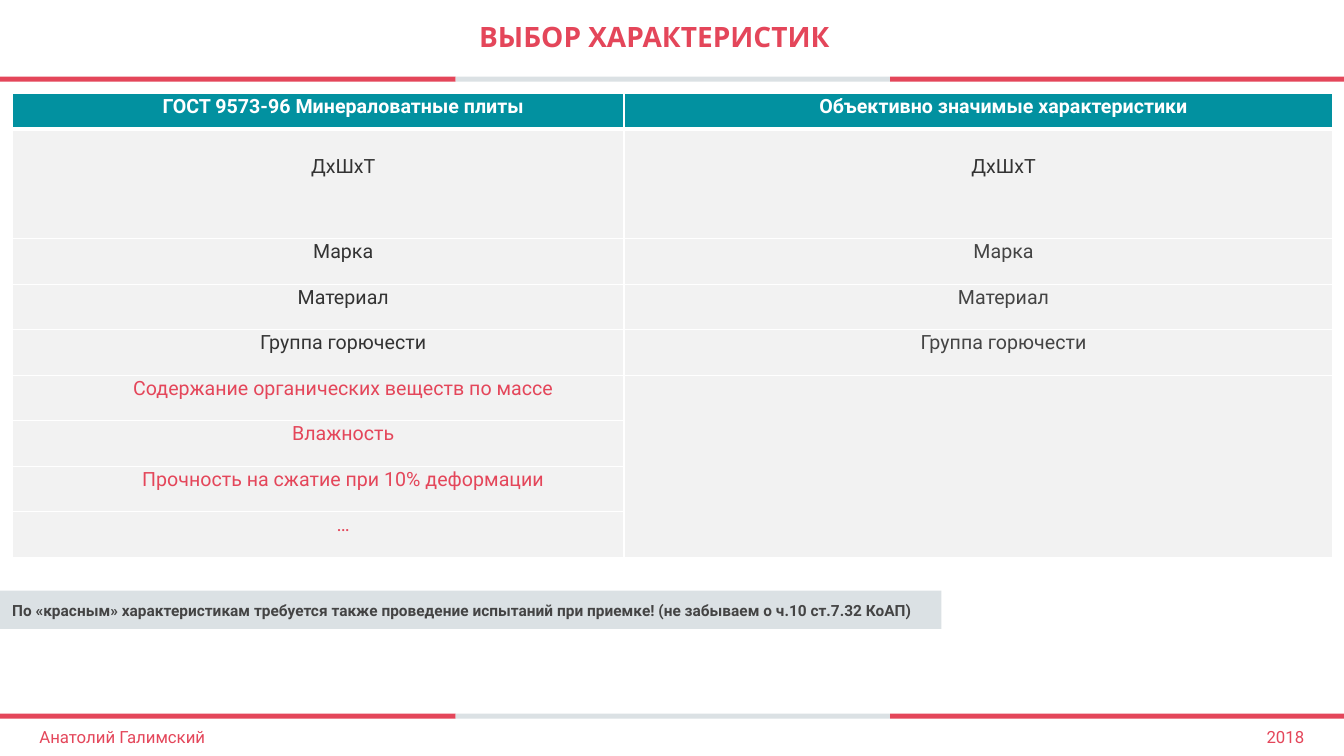
"""Build a slide that compares standard and objectively significant characteristics."""
from dataclasses import dataclass

from lxml import etree
from pptx import Presentation
from pptx.dml.color import RGBColor
from pptx.enum.shapes import MSO_SHAPE
from pptx.enum.text import MSO_ANCHOR, PP_ALIGN
from pptx.oxml.ns import qn
from pptx.util import Inches, Pt

RECTANGLE = MSO_SHAPE.RECTANGLE
MIDDLE, TOP = MSO_ANCHOR.MIDDLE, MSO_ANCHOR.TOP
LEFT, CENTER, RIGHT = PP_ALIGN.LEFT, PP_ALIGN.CENTER, PP_ALIGN.RIGHT

COLORS = {
    "red": "E4465A",
    "gray": "DBE1E4",
    "teal": "0291A0",
    "cell": "F2F2F2",
    "white": "FFFFFF",
    "dark": "333333",
    "text": "444444",
}
SLIDE_WIDTH, SLIDE_HEIGHT = Inches(13.33), Inches(7.5)
BODY_FONT, TITLE_FONT = "Roboto", "Karla"
COLUMN_WIDTHS = (45.53, 52.73)
HEADER_HEIGHT, SIZE_ROW_HEIGHT, ROW_HEIGHT = 4.67, 14.53, 6.02


@dataclass(frozen=True)
class Area:
    """Position and size in percent of the slide."""
    left: float
    top: float
    width: float
    height: float

    def lengths(self) -> tuple[int, int, int, int]:
        """Return left, top, width and height as slide lengths."""
        return (across(self.left), down(self.top), across(self.width), down(self.height))


@dataclass(frozen=True)
class Style:
    """Look of a line of text."""
    size: float
    color: str
    bold: bool = False
    align: int = LEFT
    font: str = BODY_FONT


@dataclass(frozen=True)
class Label:
    """Text placed in an area."""
    text: str
    area: Area
    style: Style
    anchor: int = MIDDLE


@dataclass(frozen=True)
class Row:
    """Two cells of the table with the colours of their text."""
    texts: tuple[str, str]
    colors: tuple[str, str]
    height: float = ROW_HEIGHT


STRIPES = ((0, 33.9, "red"), (33.9, 32.32, "gray"), (66.22, 33.78, "red"))
STRIPE_TOPS = (10.13, 94.4)
TITLE = Label("ВЫБОР ХАРАКТЕРИСТИК", Area(14.78, 0, 67.8, 10.13),
              Style(20, "red", True, CENTER, TITLE_FONT))
LABELS = (
    Label("Анатолий Галимский", Area(2.93, 95.07, 63.23, 4.8), Style(12, "red")),
    Label("2018", Area(74.55, 95.07, 22.5, 4.8), Style(12, "red", align=RIGHT)),
    Label("По «красным» характеристикам требуется также проведение испытаний при приемке! "
          "(не забываем о ч.10 ст.7.32 КоАП)",
          Area(0.9, 79.47, 69.15, 2.53), Style(11, "text", True), TOP),
)
ROWS = (
    Row(("ГОСТ 9573-96 Минераловатные плиты", "Объективно значимые характеристики"),
        ("white", "white"), HEADER_HEIGHT),
    Row(("ДхШхТ", "ДхШхТ"), ("dark", "dark"), SIZE_ROW_HEIGHT),
    *(Row((name, name), ("dark", "text")) for name in ("Марка", "Материал", "Группа горючести")),
    *(Row((name, ""), ("red", "red")) for name in (
        "Содержание органических веществ по массе", "Влажность",
        "Прочность на сжатие при 10% деформации", "…")),
)
FIRST_RED_ROW = 5


def across(percent: float) -> int:
    """Return a share of the slide width."""
    return round(SLIDE_WIDTH * percent / 100)


def down(percent: float) -> int:
    """Return a share of the slide height."""
    return round(SLIDE_HEIGHT * percent / 100)


def rgb(name: str) -> RGBColor:
    """Return a palette colour."""
    return RGBColor.from_string(COLORS[name])


def write(text_frame, text: str, style: Style):
    """Write one formatted paragraph and return it."""
    text_frame.text = text
    paragraph = text_frame.paragraphs[0]
    paragraph.alignment = style.align
    for run in paragraph.runs:
        run.font.name = style.font
        run.font.size = Pt(style.size)
        run.font.bold = style.bold
        run.font.color.rgb = rgb(style.color)
    return paragraph


def add_bar(slide, area: Area, color: str) -> None:
    """Draw a plain filled rectangle."""
    shape = slide.shapes.add_shape(RECTANGLE, *area.lengths())
    shape.shadow.inherit = False
    shape.fill.solid()
    shape.fill.fore_color.rgb = rgb(color)
    shape.line.fill.background()


def add_label(slide, label: Label) -> None:
    """Draw a text box without insets."""
    text_frame = slide.shapes.add_textbox(*label.area.lengths()).text_frame
    text_frame.word_wrap = True
    text_frame.vertical_anchor = label.anchor
    text_frame.margin_left = text_frame.margin_right = 0
    text_frame.margin_top = text_frame.margin_bottom = 0
    write(text_frame, label.text, label.style)


def set_title(slide, title: Label) -> None:
    """Place and format the title placeholder."""
    shape = slide.shapes.title
    shape.left, shape.top, shape.width, shape.height = title.area.lengths()
    shape.text_frame.vertical_anchor = title.anchor
    write(shape.text_frame, title.text, title.style).line_spacing = 0.9


def set_borders(cell, bottom_width: float) -> None:
    """Give a cell white borders."""
    properties = cell._tc.get_or_add_tcPr()
    widths = {"a:lnL": 1, "a:lnR": 1, "a:lnT": 1, "a:lnB": bottom_width}
    for index, (tag, width) in enumerate(widths.items()):
        line = etree.Element(qn(tag), w=str(Pt(width)))
        fill = etree.SubElement(line, qn("a:solidFill"))
        etree.SubElement(fill, qn("a:srgbClr"), val=COLORS["white"])
        properties.insert(index, line)


def fill_cell(cell, text: str, color: str, is_header: bool) -> None:
    """Write and format one table cell."""
    cell.margin_left = cell.margin_right = Inches(0.04)
    cell.margin_top = cell.margin_bottom = 0
    cell.fill.solid()
    cell.fill.fore_color.rgb = rgb("teal" if is_header else "cell")
    set_borders(cell, 3 if is_header else 1)
    paragraph = write(cell.text_frame, text, Style(14, color, is_header, CENTER))
    paragraph.line_spacing = 1.07
    paragraph._p.get_or_add_pPr().set("marL", str(Inches(0.5)))


def add_comparison(slide) -> None:
    """Draw the table of characteristics."""
    area = Area(0.9, 12.4, sum(COLUMN_WIDTHS), sum(row.height for row in ROWS))
    table = slide.shapes.add_table(len(ROWS), len(COLUMN_WIDTHS), *area.lengths()).table
    for column, width in zip(table.columns, COLUMN_WIDTHS):
        column.width = across(width)
    for row_index, row in enumerate(ROWS):
        table.rows[row_index].height = down(row.height)
        for column_index, (text, color) in enumerate(zip(row.texts, row.colors)):
            cell = table.cell(row_index, column_index)
            fill_cell(cell, text, color, row_index == 0)
            if row.height == SIZE_ROW_HEIGHT:
                cell.margin_top = Inches(0.24)
    table.cell(FIRST_RED_ROW, 1).merge(table.cell(len(ROWS) - 1, 1))


def main() -> None:
    """Build and save the presentation."""
    presentation = Presentation()
    presentation.slide_width, presentation.slide_height = SLIDE_WIDTH, SLIDE_HEIGHT
    slide = presentation.slides.add_slide(presentation.slide_layouts[5])
    for top in STRIPE_TOPS:
        for left, width, color in STRIPES:
            add_bar(slide, Area(left, top, width, 0.67), color)
    add_comparison(slide)
    set_title(slide, TITLE)
    add_bar(slide, Area(0, 78.13, 70.05, 5.07), "gray")
    for label in LABELS:
        add_label(slide, label)
    presentation.save("out.pptx")


if __name__ == "__main__":
    main()
